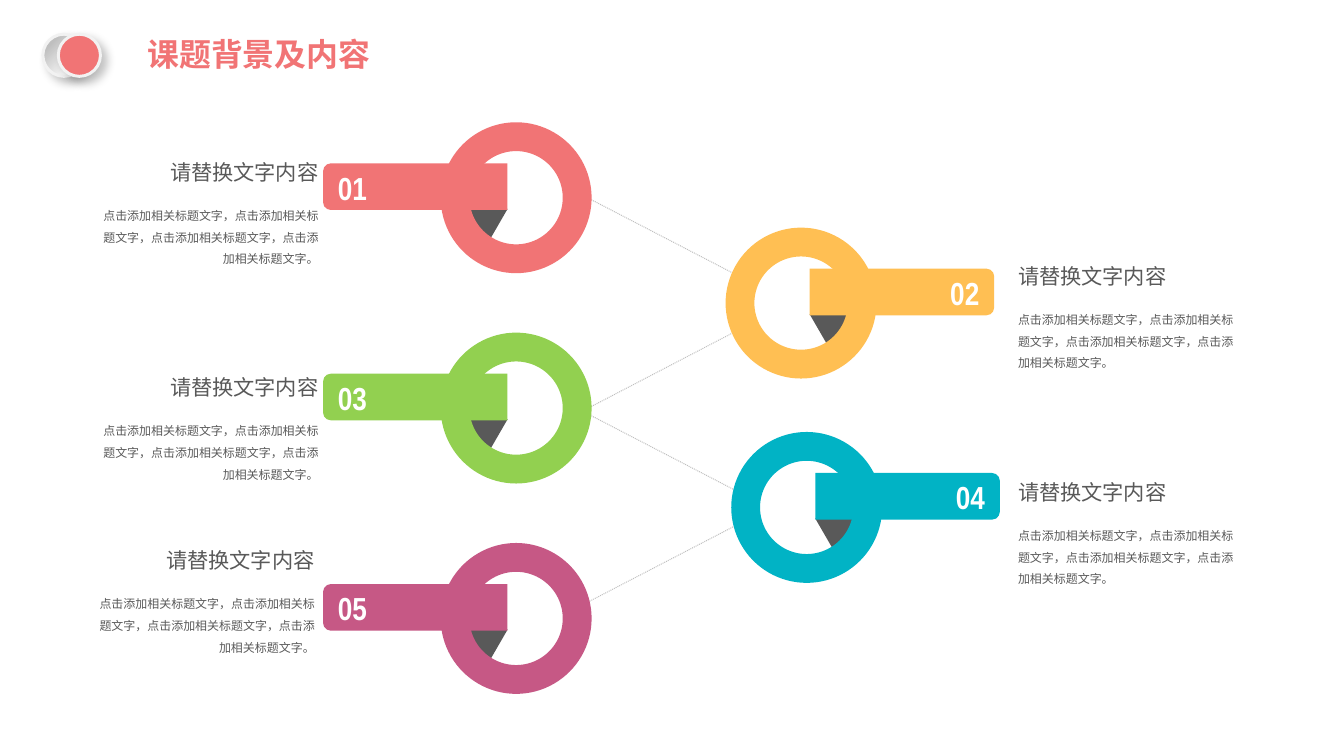
import pptx
import pptx.util
import pptx.dml.color
import pptx.enum.dml
import pptx.enum.shapes
import pptx.enum.text
import pptx.oxml.ns
import lxml.etree

Cm = pptx.util.Cm
Pt = pptx.util.Pt
KIND = pptx.enum.shapes.MSO_SHAPE
ALIGN = pptx.enum.text.PP_ALIGN
ANCHOR = pptx.enum.text.MSO_ANCHOR
FIT = pptx.enum.text.MSO_AUTO_SIZE

CORAL = "F17475"
GRAY = "595959"
HEAD = "请替换文字内容"
BODY = "，".join(["点击添加相关标题文字"] * 4) + "。"
RING = 4.01

KEYS = [
    ("01", CORAL, 11.71, 3.25, False, 2.31, 4.11),
    ("02", "FFBF53", 19.28, 6.05, True, 26.8, 6.88),
    ("03", "92D050", 11.71, 8.84, False, 2.31, 9.83),
    ("04", "01B3C5", 19.43, 11.48, True, 26.8, 12.62),
    ("05", "C65885", 11.71, 14.43, False, 2.21, 14.43),
]
LINKS = [(5.26, 7.26), (10.85, 8.84), (11, 13), (16, 14)]


def paint(code):
    return pptx.dml.color.RGBColor.from_string(code)


def sub(node, tag, **attrs):
    return lxml.etree.SubElement(node, pptx.oxml.ns.qn(tag), **attrs)


def write(frame, text, size=9, color=GRAY, bold=False, align=ALIGN.LEFT,
          lead=None, wrap=True, anchor=ANCHOR.TOP, fit=FIT.SHAPE_TO_FIT_TEXT):
    frame.text = text
    frame.word_wrap = wrap
    frame.auto_size = fit
    frame.vertical_anchor = anchor
    par = frame.paragraphs[0]
    par.alignment = align
    par.line_spacing = lead
    font = par.runs[0].font
    font.name = "Arial Narrow"
    font.size = Pt(size)
    font.bold = bold
    font.color.rgb = paint(color)


class Deck:
    def __init__(self):
        self.file = pptx.Presentation()
        self.file.slide_width = Cm(35.71)
        self.file.slide_height = Cm(20.09)
        self.slide = self.file.slides.add_slide(self.file.slide_layouts[5])

    def title(self, text):
        box = self.slide.shapes.title
        box.left, box.top, box.width, box.height = Cm(3.66), Cm(0.91), Cm(7.21), Cm(1.4)
        write(box.text_frame, text, size=24, color=CORAL, bold=True,
              lead=0.9, fit=FIT.NONE)

    def shape(self, kind, mid, row, wide, high, color, turn=0, home=None):
        home = home or self.slide.shapes
        item = home.add_shape(kind, Cm(mid - wide / 2), Cm(row - high / 2),
                              Cm(wide), Cm(high))
        item.rotation = turn
        item.shadow.inherit = False
        item.fill.solid()
        item.fill.fore_color.rgb = paint(color)
        item.line.fill.background()
        return item

    def badge(self, mid):
        dot = self.shape(KIND.OVAL, mid, 1.47, 1.12, 1.12, CORAL)
        dot.line.color.rgb = paint("F2F2F2")
        dot.line.width = Pt(2.25)
        glow = dot.element.spPr.find(pptx.oxml.ns.qn("a:effectLst"))
        cast = sub(glow, "a:outerShdw", blurRad=str(Pt(7)), dist=str(Pt(5.9)),
                   dir="2700000", algn="tl", rotWithShape="0")
        sub(sub(cast, "a:srgbClr", val="000000"), "a:alpha", val="23000")
        return dot

    def fade(self, item):
        item.fill.gradient()
        item.fill.gradient_angle = 315
        for stop, spot, code in zip(item.fill.gradient_stops, (0.2, 0.8),
                                    ("BFBFBF", "FFFFFF")):
            stop.position = spot
            stop.color.rgb = paint(code)

    def link(self, start, end):
        line = self.slide.shapes.add_connector(
            pptx.enum.shapes.MSO_CONNECTOR.STRAIGHT,
            Cm(15.62), Cm(start), Cm(19.48), Cm(end))
        line.line.color.rgb = paint("BFBFBF")
        line.line.width = Pt(0.75)
        line.line.dash_style = pptx.enum.dml.MSO_LINE.ROUND_DOT
        sub(line.element.spPr, "a:effectLst")

    def key(self, text, color, left, top, right):
        side = 1 if right else -1
        mid = left + RING / 2
        turn = 90 * side % 360
        self.shape(KIND.ISOSCELES_TRIANGLE, mid + side * 1.07, top + 2.59,
                   1.35, 1.17, GRAY, 60 * side % 360)
        ring = self.shape(KIND.DONUT, mid, top + RING / 2, RING, RING, color)
        ring.adjustments[0] = 0.191
        home = self.slide.shapes.add_group_shape().shapes
        self.shape(KIND.ROUND_2_SAME_RECTANGLE, mid + side * 2.68, top + 1.71,
                   1.24, 4.9, color, turn, home)
        tag = self.shape(KIND.RECTANGLE, mid + side * 4.35, top + 1.73,
                         0.86, 1.02, color, home=home)
        frame = tag.text_frame
        frame.margin_left = frame.margin_right = 0
        frame.margin_top = frame.margin_bottom = 0
        write(frame, text, size=24, color="FFFFFF", bold=True,
              align=ALIGN.CENTER, wrap=False, anchor=ANCHOR.BOTTOM)

    def text(self, text, left, top, wide, high, **style):
        box = self.slide.shapes.add_textbox(Cm(left), Cm(top), Cm(wide), Cm(high))
        write(box.text_frame, text, **style)

    def note(self, left, top, right):
        align = ALIGN.LEFT if right else ALIGN.RIGHT
        wide, short = 6.4, 4.5
        start = left if right else left + wide - short
        self.text(HEAD, start, top, short, 0.94, size=16, align=align, wrap=False)
        self.text(BODY, left, top + 1.12, wide, 1.98, align=align, lead=1.5)


def main():
    deck = Deck()
    deck.title("课题背景及内容")
    deck.fade(deck.badge(1.7))
    deck.badge(2.11)
    for start, end in LINKS:
        deck.link(start, end)
    for text, color, left, top, right, edge, head in KEYS:
        deck.key(text, color, left, top, right)
        deck.note(edge, head, right)
    deck.file.save("out.pptx")


if __name__ == "__main__":
    main()
